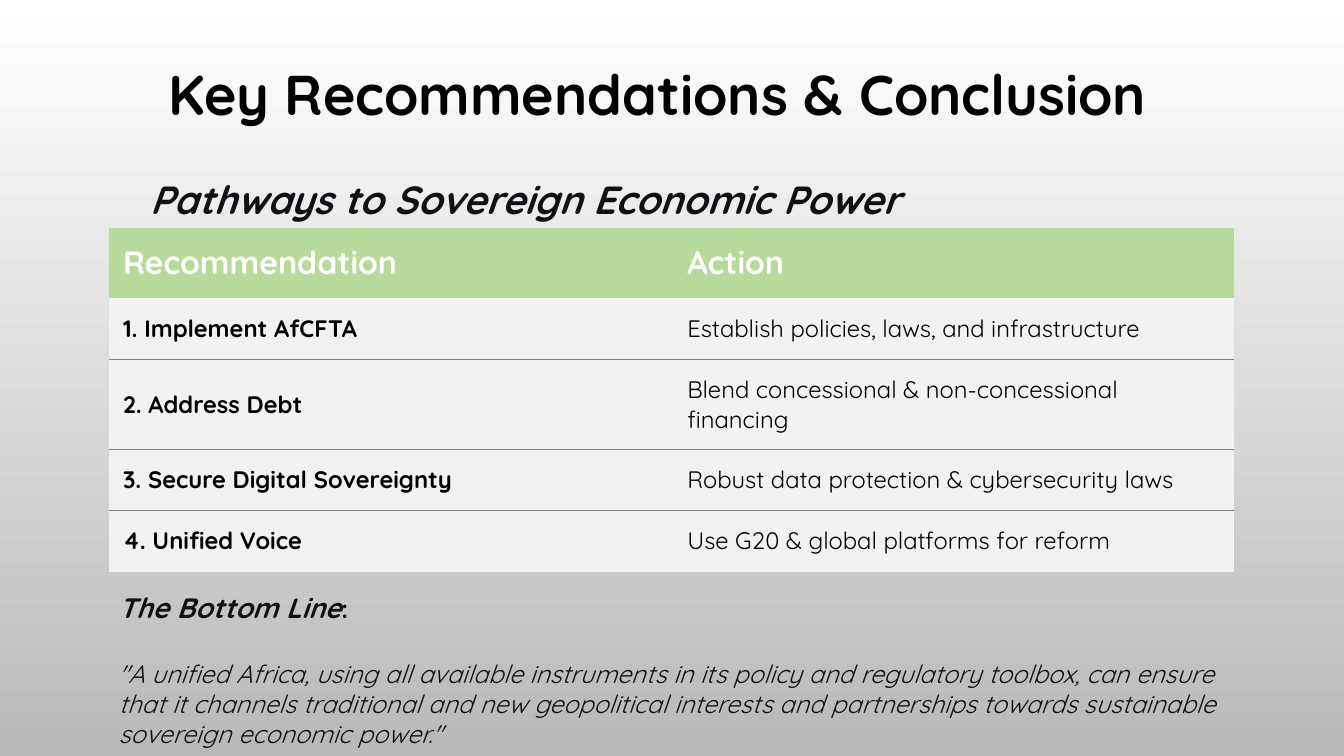
from pptx import Presentation
from pptx.dml.color import RGBColor
from pptx.enum.text import MSO_ANCHOR, MSO_AUTO_SIZE, PP_ALIGN
from pptx.oxml import parse_xml
from pptx.oxml.ns import nsdecls, qn
from pptx.util import Cm, Pt

INK = "0F1115"
BLACK = "000000"


def color(value):
    return RGBColor.from_string(value)


def set_font(font, size, value, bold=False, italic=False):
    font.name = "Quicksand"
    font.size = Pt(size)
    font.color.rgb = color(value)
    font.bold = bold
    font.italic = italic


deck = Presentation()
deck.slide_width, deck.slide_height = Cm(33.87), Cm(19.05)
page = deck.slides.add_slide(deck.slide_layouts[5])

# Background: white at the top to grey at the bottom
background = page.background.fill
background.gradient()
background.gradient_angle = 270
for stop, value in zip(background.gradient_stops, ("FFFFFF", "B9B9B9")):
    stop.color.rgb = color(value)

# Title
title = page.shapes.title
title.left, title.top, title.width, title.height = Cm(1.8), Cm(1.7), Cm(29.54), Cm(3.02)
frame = title.text_frame
frame.text = "Key Recommendations & Conclusion"
frame.auto_size = MSO_AUTO_SIZE.NONE
frame.vertical_anchor = MSO_ANCHOR.TOP
frame.margin_top = 0
para = frame.paragraphs[0]
para.alignment = PP_ALIGN.CENTER
para.line_spacing = 0.9
set_font(para.font, 40, BLACK, bold=True)

# Recommendations table
rows = [
    ("Recommendation", "Action"),
    ("1. Implement AfCFTA", "Establish policies, laws, and infrastructure"),
    ("2. Address Debt", "Blend concessional & non-concessional financing"),
    ("3. Secure Digital Sovereignty", "Robust data protection & cybersecurity laws"),
    ("4. Unified Voice", "Use G20 & global platforms for reform"),
]
table = page.shapes.add_table(
    len(rows), 2, Cm(2.74), Cm(5.74), Cm(28.37), Cm(7.98)).table
table.first_row = True
table.horz_banding = False
# Plain table style without grid lines
table._tbl.tblPr.find(qn("a:tableStyleId")).text = "{2D5ABB26-0587-4C30-8999-92F81FD0307C}"
table.columns[0].width, table.columns[1].width = Cm(13.97), Cm(14.4)

for row_index, texts in enumerate(rows):
    header = row_index == 0
    table.rows[row_index].height = Cm(1.78 if header else 1.55)
    for column_index, text in enumerate(texts):
        cell = table.cell(row_index, column_index)
        cell.text = text
        cell.vertical_anchor = MSO_ANCHOR.MIDDLE
        cell.margin_left = Cm(0.61 if column_index else 0.36)
        cell.margin_right = Cm(0.36 if column_index and not header else 0.61)
        cell.margin_top, cell.margin_bottom = Cm(0.36), Cm(0.38)
        cell.fill.solid()
        cell.fill.fore_color.rgb = color("B6DA9A" if header else "F2F2F2")
        set_font(cell.text_frame.paragraphs[0].font, 23 if header else 17,
                 "FFFFFF" if header else BLACK, bold=header or column_index == 0)

        # Thin rules between the body rows
        edges = []
        if row_index > 1:
            edges.append("lnT")
        if 0 < row_index < len(rows) - 1:
            edges.append("lnB")
        for position, edge in enumerate(edges):
            cell._tc.get_or_add_tcPr().insert(position, parse_xml(
                f'<a:{edge} {nsdecls("a")} w="9525"><a:solidFill>'
                f'<a:srgbClr val="808080"/></a:solidFill></a:{edge}>'))

# Subtitle
box = page.shapes.add_textbox(Cm(3.53), Cm(4.29), Cm(26.7), Cm(1.45))
box.text_frame.word_wrap = True
para = box.text_frame.paragraphs[0]
para.text = "Pathways to Sovereign Economic Power"
set_font(para.font, 28, INK, bold=True, italic=True)

# Bottom line
box = page.shapes.add_textbox(Cm(2.74), Cm(14.76), Cm(28.37), Cm(4.27))
frame = box.text_frame
frame.word_wrap = True
heading = frame.paragraphs[0]
heading.space_after = Pt(12)
for text, size, italic in (("The Bottom Line", 20, True), (":", 18, False)):
    span = heading.add_run()
    span.text = text
    set_font(span.font, size, INK, bold=True, italic=italic)
quote = frame.add_paragraph()
quote.text = (
    '"A unified Africa, using all available instruments in its policy and regulatory '
    'toolbox, can ensure that it channels traditional and new geopolitical interests '
    'and partnerships towards sustainable sovereign economic power."')
quote.space_before = Pt(12)
set_font(quote.font, 18, INK, italic=True)

deck.save("out.pptx")
